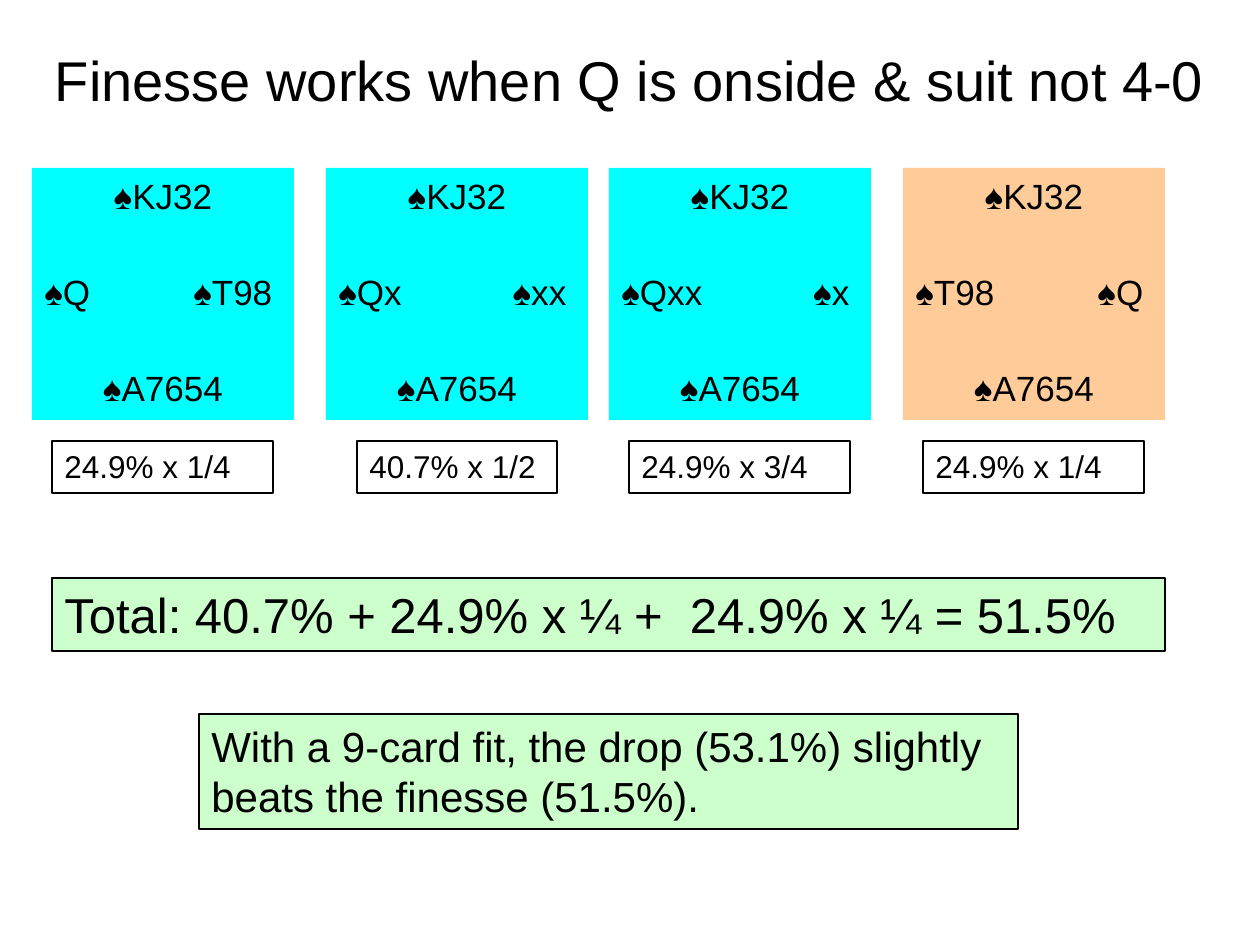
from lxml import etree
from pptx import Presentation
from pptx.dml.color import RGBColor
from pptx.enum import shapes, text
from pptx.oxml.ns import qn
from pptx.util import Emu, Pt

PX = 914400 / 126
BLACK = RGBColor(0x00, 0x00, 0x00)
CYAN = RGBColor(0x00, 0xFF, 0xFF)
PEACH = RGBColor(0xFF, 0xCC, 0x99)
GREEN = RGBColor(0xCC, 0xFF, 0xCC)

TITLE = "Finesse works when Q is onside & suit not 4-0"
NORTH, SOUTH = "♠KJ32", "♠A7654"
# left, fill, west, east, odds, odds box width
DEALS = [
    (32, CYAN, "♠Q", "♠T98", "24.9% x 1/4", 221),
    (326, CYAN, "♠Qx", "♠xx", "40.7% x 1/2", 200),
    (609, CYAN, "♠Qxx", "♠x", "24.9% x 3/4", 221),
    (903, PEACH, "♠T98", "♠Q", "24.9% x 1/4", 221),
]
# text, box, size
SUMMARIES = [
    ("Total: 40.7% + 24.9% x ¼ +  24.9% x ¼ = 51.5%", (52, 578, 1113, 73), 28),
    ("With a 9-card fit, the drop (53.1%) slightly beats the finesse (51.5%).",
     (199, 714, 819, 115), 24),
]
DEAL_TOP, DEAL_W, DEAL_H = 168, 262, 252
ODDS_TOP, ODDS_H = 441, 52
EAST_TAB = 228


def px(n):
    return Emu(round(n * PX))


def style(p, size, align):
    p.alignment = align
    p.font.size = Pt(size)
    p.font.name = "Arial"
    p.font.color.rgb = BLACK


def add_box(slide, box, lines, size, fill=None, outlined=True):
    """Add a rectangle whose lines are (text, alignment) pairs."""
    sp = slide.shapes.add_shape(shapes.MSO_SHAPE.RECTANGLE, *map(px, box))
    sp.shadow.inherit = False
    if fill is None:
        sp.fill.background()
    else:
        sp.fill.solid()
        sp.fill.fore_color.rgb = fill
    if outlined:
        sp.line.color.rgb = BLACK
        sp.line.width = Pt(0.75)
    else:
        sp.line.fill.background()
    tf = sp.text_frame
    tf.word_wrap = True
    tf.vertical_anchor = text.MSO_ANCHOR.TOP
    for i, (words, align) in enumerate(lines):
        p = tf.add_paragraph() if i else tf.paragraphs[0]
        p.text = words
        style(p, size, align)
    return tf


def add_right_tab(p, pos):
    tabs = etree.Element(qn("a:tabLst"))
    etree.SubElement(tabs, qn("a:tab"), pos=str(px(pos)), algn="r")
    # Tab stops come before the default run properties
    p.font._element.addprevious(tabs)


prs = Presentation()
prs.slide_width, prs.slide_height = px(1260), px(945)
slide = prs.slides.add_slide(prs.slide_layouts[5])
LEFT, CENTER = text.PP_ALIGN.LEFT, text.PP_ALIGN.CENTER

# Title
title = slide.shapes.title
title.left, title.top, title.width, title.height = map(px, (21, 32, 1218, 94))
tf = title.text_frame
tf.text = TITLE
tf.vertical_anchor = text.MSO_ANCHOR.MIDDLE
style(tf.paragraphs[0], 32, CENTER)

# Deals, each with its odds centred below
for left, fill, west, east, odds, odds_w in DEALS:
    hands = [(NORTH, CENTER), (f"{west}\t{east}", LEFT), (SOUTH, CENTER)]
    tf = add_box(slide, (left, DEAL_TOP, DEAL_W, DEAL_H), hands, 20, fill, False)
    for p in tf.paragraphs[1:]:
        p.space_before = Pt(31)
    add_right_tab(tf.paragraphs[1], EAST_TAB)
    odds_left = left + (DEAL_W - odds_w) // 2
    add_box(slide, (odds_left, ODDS_TOP, odds_w, ODDS_H), [(odds, LEFT)], 18)

# Summaries
for words, box, size in SUMMARIES:
    add_box(slide, box, [(words, LEFT)], size, GREEN)

prs.save("out.pptx")
